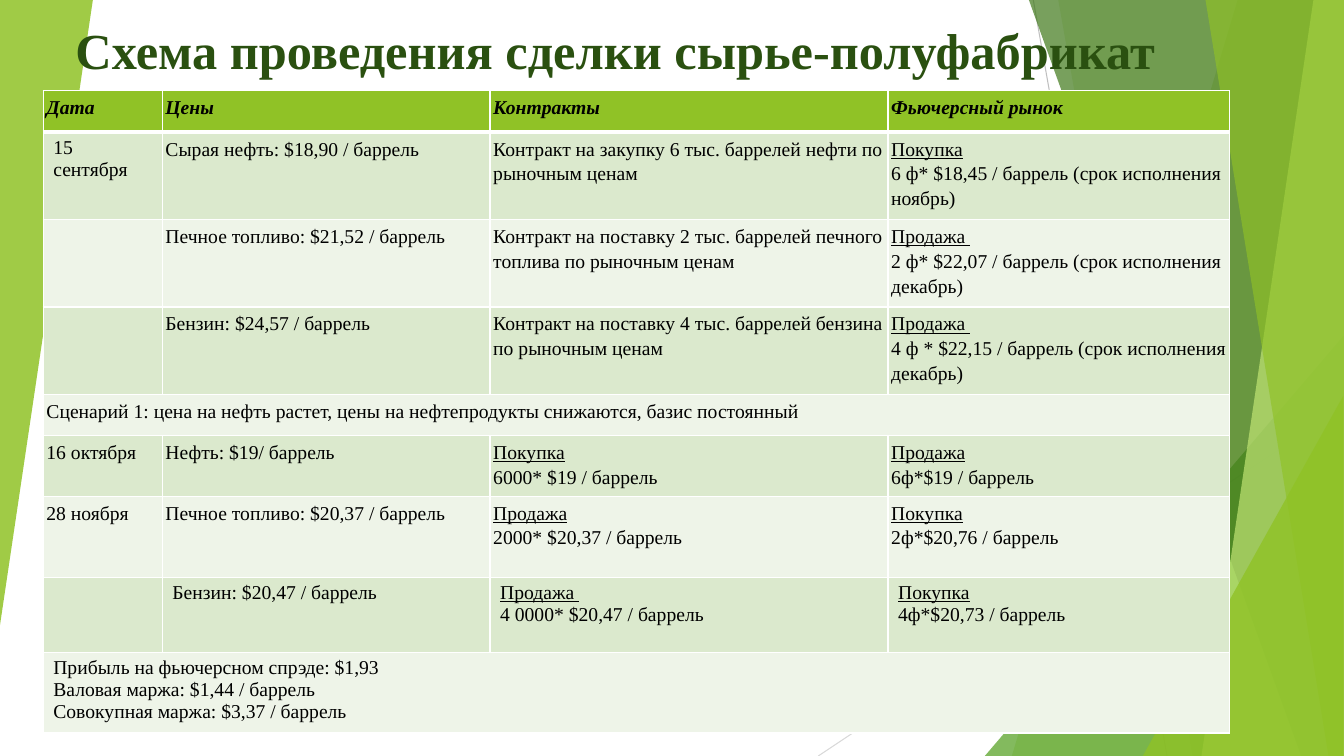
from dataclasses import dataclass

from lxml.etree import SubElement
from pptx import Presentation
from pptx.dml.color import RGBColor
from pptx.enum.shapes import MSO_CONNECTOR, MSO_SHAPE
from pptx.enum.text import MSO_ANCHOR, PP_ALIGN
from pptx.oxml import parse_xml
from pptx.oxml.ns import nsdecls, qn
from pptx.util import Cm, Pt

SLIDE_WIDTH, SLIDE_HEIGHT = 33.87, 19.05


@dataclass(frozen=True)
class Theme:
    font: str = "Times New Roman"
    title_size: int = 36
    body_size: int = 14
    title: str = "2A5010"
    text: str = "000000"
    green: str = "90C226"
    leaf: str = "54A021"
    forest: str = "3F7819"
    lime: str = "C0E474"
    odd_row: str = "DBE9CD"
    even_row: str = "EEF4E8"
    border: str = "FFFFFF"
    dark_line: str = "BFBFBF"
    light_line: str = "D9D9D9"


class SlideBuilder:
    """Draws themed elements on one slide, with lengths in centimetres."""

    def __init__(self, slide, theme):
        self.slide = slide
        self.shapes = slide.shapes
        self.theme = theme

    def line(self, start, end, color):
        points = [Cm(value) for value in (*start, *end)]
        connector = self.shapes.add_connector(MSO_CONNECTOR.STRAIGHT, *points)
        connector.line.color.rgb = RGBColor.from_string(color)
        connector.line.width = Pt(0.75)
        SubElement(connector._element.spPr, qn("a:effectLst"))

    def paint(self, shape, color, opacity):
        shape.shadow.inherit = False
        shape.line.fill.background()
        shape.fill.solid()
        shape.fill.fore_color.rgb = RGBColor.from_string(color)
        color_element = shape._element.spPr.find(qn("a:solidFill"))[0]
        SubElement(color_element, qn("a:alpha"), val=str(opacity * 1000))

    def panel(self, top_x, bottom_x, color, opacity):
        corners = [(SLIDE_WIDTH, 0), (SLIDE_WIDTH, SLIDE_HEIGHT), (bottom_x, SLIDE_HEIGHT)]
        outline = self.shapes.build_freeform(Cm(top_x), 0)
        outline.add_line_segments([(Cm(x), Cm(y)) for x, y in corners])
        self.paint(outline.convert_to_shape(), color, opacity)

    def triangle(self, box, color, opacity, rotation=0):
        shape = self.shapes.add_shape(MSO_SHAPE.ISOSCELES_TRIANGLE, *map(Cm, box))
        shape.adjustments[0] = 1
        shape.rotation = rotation
        self.paint(shape, color, opacity)

    def run(self, paragraph, text, size, color, bold=False, italic=False, underline=False):
        run = paragraph.add_run()
        run.text = text
        font = run.font
        font.name, font.size = self.theme.font, Pt(size)
        font.bold, font.italic, font.underline = bold, italic, underline
        font.color.rgb = RGBColor.from_string(color)

    def title(self, box, text):
        frame = self.shapes.add_textbox(*map(Cm, box)).text_frame
        frame.word_wrap = True
        frame.vertical_anchor = MSO_ANCHOR.BOTTOM
        paragraph = frame.paragraphs[0]
        paragraph.alignment = PP_ALIGN.CENTER
        self.run(paragraph, text, self.theme.title_size, self.theme.title, bold=True)

    def cell_borders(self, cell, bottom):
        properties = cell._tc.get_or_add_tcPr()
        for index, side in enumerate("LRTB"):
            width = Pt(bottom if side == "B" else 1)
            properties.insert(index, parse_xml(
                f'<a:ln{side} {nsdecls("a")} w="{width}"><a:solidFill>'
                f'<a:srgbClr val="{self.theme.border}"/></a:solidFill></a:ln{side}>'))

    def cell(self, cell, text, fill, header, loose):
        cell.fill.solid()
        cell.fill.fore_color.rgb = RGBColor.from_string(fill)
        self.cell_borders(cell, 3 if header else 1)
        if not loose:
            cell.margin_left = cell.margin_right = Cm(0.08)
            cell.margin_top = cell.margin_bottom = Cm(0.08)
        if not text:
            return
        for index, content in enumerate(text.split("\n")):
            frame = cell.text_frame
            paragraph = frame.add_paragraph() if index else frame.paragraphs[0]
            paragraph.line_spacing = 1.0 if loose else 1.15
            self.run(paragraph, content, self.theme.body_size, self.theme.text,
                     header, header, content.strip() in DEAL_SIDES)

    def table(self, left, top, widths, rows):
        box = (left, top, sum(widths), sum(height for height, _ in rows))
        table = self.shapes.add_table(len(rows), len(widths), *map(Cm, box)).table
        for column, width in zip(table.columns, widths):
            column.width = Cm(width)
        bands = (self.theme.even_row, self.theme.odd_row)
        for row, (height, texts) in enumerate(rows):
            table.rows[row].height = Cm(height)
            if len(texts) == 1:
                table.cell(row, 0).merge(table.cell(row, len(widths) - 1))
            fill = bands[row % 2] if row else self.theme.green
            for column, text in enumerate(texts):
                loose = (row, column) in LOOSE_CELLS
                self.cell(table.cell(row, column), text, fill, row == 0, loose)


DEAL_SIDES = ("Покупка", "Продажа")
LOOSE_CELLS = {(1, 0), (7, 1), (7, 2), (7, 3), (8, 0)}
COLUMN_WIDTHS = (3, 8.26, 10.03, 8.61)
DEAL_ROWS = [
    (1.04, ("Дата", "Цены", "Контракты", "Фьючерсный рынок")),
    (2.04, ("15 сентября", "Сырая нефть: $18,90 / баррель",
            "Контракт на закупку 6 тыс. баррелей нефти по рыночным ценам",
            "Покупка\n6 ф* $18,45 / баррель (срок исполнения ноябрь)")),
    (2.04, ("", "Печное топливо: $21,52 / баррель",
            "Контракт на поставку 2 тыс. баррелей печного топлива по рыночным ценам",
            "Продажа \n2 ф* $22,07 / баррель (срок исполнения декабрь)")),
    (2.04, ("", "Бензин: $24,57 / баррель",
            "Контракт на поставку 4 тыс. баррелей бензина по рыночным ценам",
            "Продажа \n4 ф * $22,15 / баррель (срок исполнения декабрь)")),
    (1.04, ("Сценарий 1: цена на нефть растет, цены на нефтепродукты снижаются, "
            "базис постоянный",)),
    (1.41, ("16 октября", "Нефть: $19/ баррель",
            "Покупка\n6000* $19 / баррель", "Продажа\n6ф*$19 / баррель")),
    (2.04, ("28 ноября", "Печное топливо: $20,37 / баррель",
            "Продажа\n2000* $20,37 / баррель", "Покупка\n2ф*$20,76 / баррель")),
    (1.89, ("", "Бензин: $20,47 / баррель",
            "Продажа \n4 0000* $20,47 / баррель", "Покупка\n4ф*$20,73 / баррель")),
    (1.89, ("Прибыль на фьючерсном спрэде: $1,93\nВаловая маржа: $1,44 / баррель\n"
            "Совокупная маржа: $3,37 / баррель",)),
]


def main():
    presentation = Presentation()
    presentation.slide_width = Cm(SLIDE_WIDTH)
    presentation.slide_height = Cm(SLIDE_HEIGHT)
    theme = Theme()
    builder = SlideBuilder(presentation.slides.add_slide(presentation.slide_layouts[6]), theme)
    builder.line((26.04, 0), (29.41, SLIDE_HEIGHT), theme.dark_line)
    builder.line((SLIDE_WIDTH, 10.24), (20.62, SLIDE_HEIGHT), theme.light_line)
    builder.panel(31.19, 25.5, theme.green, 30)
    builder.panel(26.67, 30.05, theme.green, 20)
    builder.triangle((24.82, 8.46, 9.04, 10.59), theme.leaf, 72)
    builder.panel(25.93, 32.79, theme.forest, 70)
    builder.panel(33.1, 30.28, theme.lime, 70)
    builder.panel(30.38, 33.48, theme.green, 65)
    builder.triangle((28.8, 9.98, 5.05, 9.07), theme.green, 80)
    builder.triangle((0, 0, 2.34, 15.75), theme.green, 85, rotation=180)
    builder.title((0.74, 0.18, 29.54, 1.96), "Схема проведения сделки сырье-полуфабрикат")
    builder.table(1.09, 2.29, COLUMN_WIDTHS, DEAL_ROWS)
    presentation.save("out.pptx")


if __name__ == "__main__":
    main()
